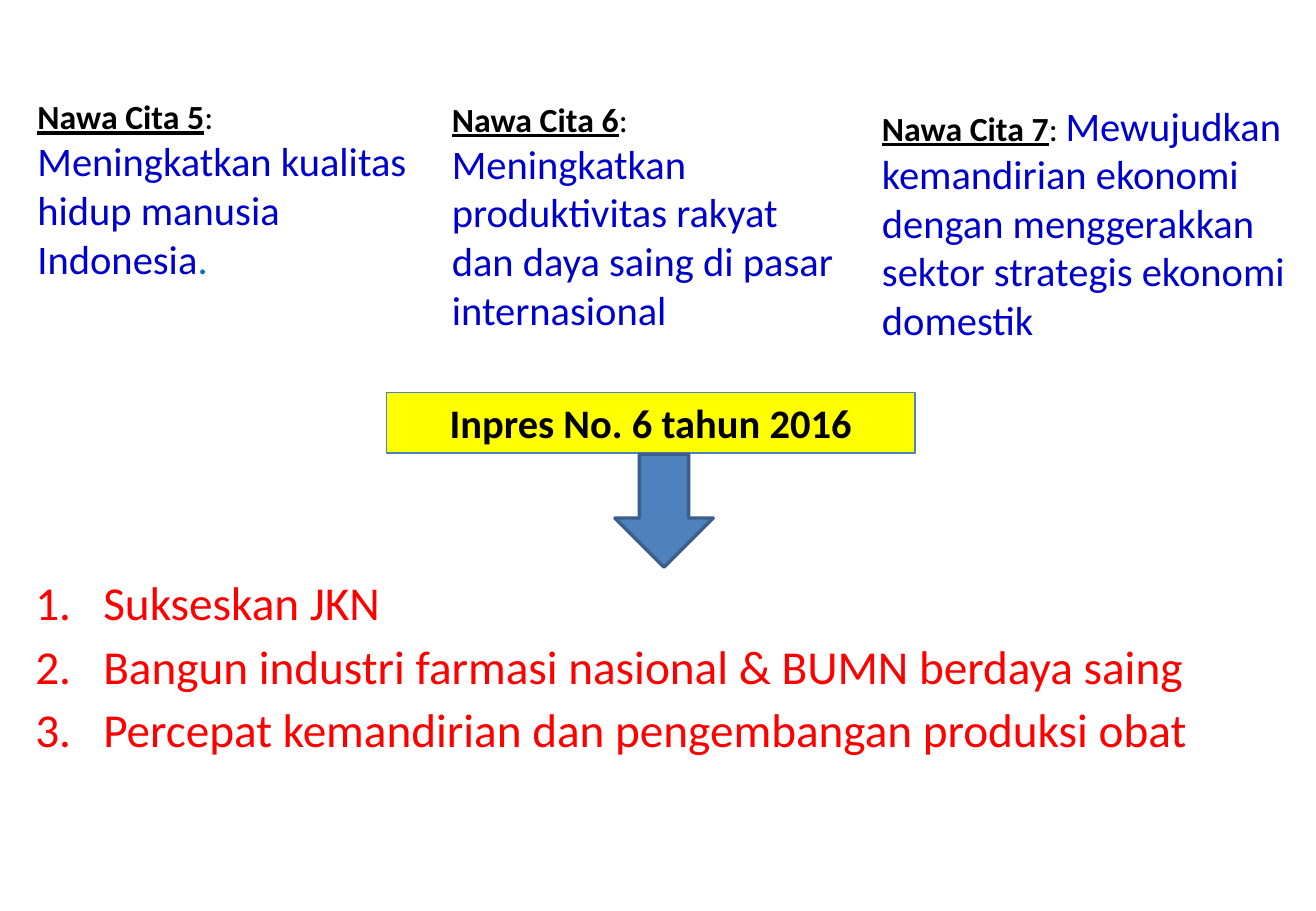
from dataclasses import dataclass

from lxml.etree import SubElement
from pptx import Presentation
from pptx.dml.color import RGBColor as Rgb
from pptx.enum.shapes import MSO_SHAPE as Shape
from pptx.enum.text import MSO_ANCHOR as Anchor
from pptx.enum.text import MSO_AUTO_SIZE as Fit
from pptx.enum.text import PP_ALIGN as Align
from pptx.oxml.ns import qn
from pptx.util import Pt

SCALE = 9144


@dataclass(frozen=True)
class Theme:
    font: str = "Calibri"
    black: str = "000000"
    navy: str = "0000CC"
    sky: str = "0070C0"
    red: str = "FF0000"
    yellow: str = "FFFF00"
    blue: str = "4F81BD"
    edge: str = "3A5F8C"
    small: int = 20
    mid: int = 24
    large: int = 28


def px(*nums):
    return [num * SCALE for num in nums]


def write(para, text, font, size, color, bold=False, under=False):
    run = para.add_run()
    run.text = text
    face = run.font
    face.name = font
    face.size = Pt(size)
    face.bold = bold
    face.underline = under
    face.color.rgb = Rgb.from_string(color)


class Page:
    def __init__(self, deck, theme):
        self.theme = theme
        self.slide = deck.slides.add_slide(deck.slide_layouts[1])
        title = self.slide.shapes.title.element
        title.getparent().remove(title)

    def goal(self, box, head, parts):
        theme = self.theme
        frame = self.slide.shapes.add_textbox(*px(*box)).text_frame
        frame.word_wrap = True
        para = frame.paragraphs[0]
        write(para, head, theme.font, theme.small, theme.black, bold=True, under=True)
        write(para, ": ", theme.font, theme.small, theme.black)
        for text, color in parts:
            write(para, text, theme.font, theme.mid, color)

    def block(self, kind, box, fill, line, width, text=""):
        theme = self.theme
        shape = self.slide.shapes.add_shape(kind, *px(*box))
        shape.shadow.inherit = False
        shape.fill.solid()
        shape.fill.fore_color.rgb = Rgb.from_string(fill)
        shape.line.color.rgb = Rgb.from_string(line)
        shape.line.width = Pt(width)
        if text:
            frame = shape.text_frame
            frame.vertical_anchor = Anchor.MIDDLE
            para = frame.paragraphs[0]
            para.alignment = Align.CENTER
            write(para, text, theme.font, theme.mid, theme.black, bold=True)

    def steps(self, box, items, indent):
        theme = self.theme
        body = self.slide.placeholders[1]
        body.left, body.top, body.width, body.height = px(*box)
        frame = body.text_frame
        frame.auto_size = Fit.NONE
        for spot, item in enumerate(items):
            para = frame.add_paragraph() if spot else frame.paragraphs[0]
            para.space_before = para.space_after = Pt(2)
            props = para._p.get_or_add_pPr()
            props.set("marL", str(indent * SCALE))
            props.set("indent", str(-indent * SCALE))
            SubElement(props, qn("a:buFont"), typeface="+mj-lt")
            SubElement(props, qn("a:buAutoNum"), type="arabicPeriod")
            write(para, item, theme.font, theme.large, theme.red)


def main():
    deck = Presentation()
    deck.slide_width, deck.slide_height = px(1083, 750)
    theme = Theme()
    page = Page(deck, theme)
    page.steps((19, 467, 1061, 242), [
        "Sukseskan JKN",
        "Bangun industri farmasi nasional & BUMN berdaya saing",
        "Percepat kemandirian dan pengembangan produksi obat",
    ], indent=56)
    goals = [
        ((21, 74, 341, 165), "Nawa Cita 5", [
            ("Meningkatkan kualitas hidup manusia Indonesia", theme.navy),
            (".", theme.sky),
        ]),
        ((362, 76, 341, 205), "Nawa Cita 6", [
            ("Meningkatkan produktivitas rakyat dan daya saing di pasar internasional", theme.navy),
        ]),
        ((716, 78, 367, 212), "Nawa Cita 7", [
            ("Mewujudkan kemandirian ekonomi dengan menggerakkan sektor strategis ekonomi domestik", theme.navy),
        ]),
    ]
    for box, head, parts in goals:
        page.goal(box, head, parts)
    page.block(Shape.RECTANGLE, (318, 323, 435, 50), theme.yellow, theme.blue, 0.75,
               "Inpres No. 6 tahun 2016")
    page.block(Shape.DOWN_ARROW, (506, 374, 81, 93), theme.blue, theme.edge, 2)
    deck.save("out.pptx")


if __name__ == "__main__":
    main()
